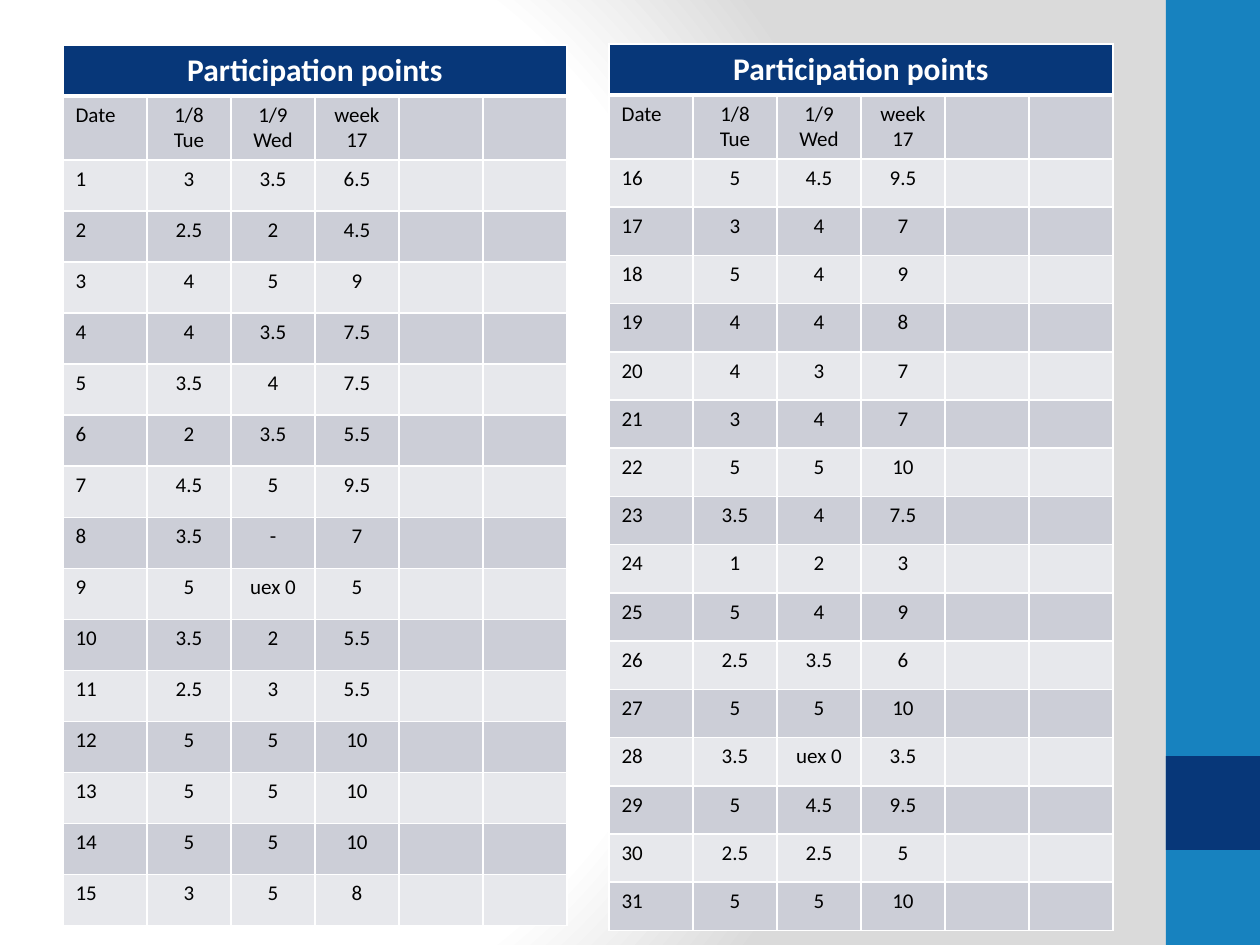
from lxml import etree
from pptx import Presentation
from pptx import util as u
from pptx.dml.color import RGBColor
from pptx.enum import shapes, text
from pptx.oxml import parse_xml
from pptx.oxml.ns import nsdecls, qn

EMU_PER_PX = 914400 / 126
COLORS = {
    "white": "FFFFFF", "black": "000000", "grey": "DADADA",
    "blue": "1782BF", "navy": "073779", "dark_band": "CCCED7", "light_band": "E7E8EC",
}
FONT = "Calibri"
COLUMNS = 6

FIRST_HALF = [
    ("Date", "1/8 Tue", "1/9\nWed", "week 17"),
    ("1", "3", "3.5", "6.5"),
    ("2", "2.5", "2", "4.5"),
    ("3", "4", "5", "9"),
    ("4", "4", "3.5", "7.5"),
    ("5", "3.5", "4", "7.5"),
    ("6", "2", "3.5", "5.5"),
    ("7", "4.5", "5", "9.5"),
    ("8", "3.5", "-", "7"),
    ("9", "5", "uex 0", "5"),
    ("10", "3.5", "2", "5.5"),
    ("11", "2.5", "3", "5.5"),
    ("12", "5", "5", "10"),
    ("13", "5", "5", "10"),
    ("14", "5", "5", "10"),
    ("15", "3", "5", "8"),
]
SECOND_HALF = [
    ("Date", "1/8 Tue", "1/9 Wed", "week 17"),
    ("16", "5", "4.5", "9.5"),
    ("17", "3", "4", "7"),
    ("18", "5", "4", "9"),
    ("19", "4", "4", "8"),
    ("20", "4", "3", "7"),
    ("21", "3", "4", "7"),
    ("22", "5", "5", "10"),
    ("23", "3.5", "4", "7.5"),
    ("24", "1", "2", "3"),
    ("25", "5", "4", "9"),
    ("26", "2.5", "3.5", "6"),
    ("27", "5", "5", "10"),
    ("28", "3.5", "uex 0", "3.5"),
    ("29", "5", "4.5", "9.5"),
    ("30", "2.5", "2.5", "5"),
    ("31", "5", "5", "10"),
]


def px(length):
    return u.Emu(round(length * EMU_PER_PX))


def rgb(name):
    return RGBColor.from_string(COLORS[name])


def paint_background(slide):
    """Radial gradient, white on the left and grey towards the right."""
    stops = "".join(
        f'<a:gs pos="{pos}"><a:srgbClr val="{COLORS[name]}"/></a:gs>'
        for pos, name in ((0, "white"), (75000, "white"), (100000, "grey"))
    )
    background = parse_xml(
        f'<p:bg {nsdecls("p", "a")}><p:bgPr><a:gradFill rotWithShape="1">'
        f'<a:gsLst>{stops}</a:gsLst><a:path path="circle">'
        '<a:fillToRect l="20000" t="50000" r="100000" b="50000"/></a:path>'
        '</a:gradFill><a:effectLst/></p:bgPr></p:bg>'
    )
    slide.element.cSld.insert(0, background)


def add_block(slide, left, top, width, height, color):
    block = slide.shapes.add_shape(
        shapes.MSO_SHAPE.RECTANGLE, px(left), px(top), px(width), px(height))
    block.shadow.inherit = False
    block.fill.solid()
    block.fill.fore_color.rgb = rgb(color)
    block.line.fill.background()


def add_side_band(slide, left, top, width, height):
    add_block(slide, left, top, width, height, "blue")
    add_block(slide, left, top + height * 4 / 5, width, width, "navy")


def set_borders(cell, bottom):
    properties = cell._tc.get_or_add_tcPr()
    for index, (side, points) in enumerate(
            (("lnL", 1), ("lnR", 1), ("lnT", 1), ("lnB", bottom))):
        border = etree.Element(qn(f"a:{side}"), w=str(u.Pt(points)))
        fill = etree.SubElement(border, qn("a:solidFill"))
        etree.SubElement(fill, qn("a:srgbClr"), val=COLORS["white"])
        properties.insert(index, border)


def fill_cell(cell, words, size, color, band, centred, bold=False, bottom=1):
    cell.text_frame.text = words
    cell.fill.solid()
    cell.fill.fore_color.rgb = rgb(band)
    set_borders(cell, bottom)
    for paragraph in cell.text_frame.paragraphs:
        if centred:
            paragraph.alignment = text.PP_ALIGN.CENTER
        for run in paragraph.runs:
            run.font.name = FONT
            run.font.size = u.Pt(size)
            run.font.bold = bold
            run.font.color.rgb = rgb(color)
        # Keeps empty cells from stretching their row
        paragraph._p.get_or_add_endParaRPr().set("sz", str(size * 100))


def add_points_table(slide, left, top, width, height, title_height, points):
    table = slide.shapes.add_table(
        len(points) + 1, COLUMNS, px(left), px(top), px(width), px(height)).table
    table.first_row = table.horz_banding = False
    for column in table.columns:
        column.width = px(width / COLUMNS)
    for row in table.rows:
        row.height = px((height - title_height) / len(points))
    table.rows[0].height = px(title_height)

    for column in range(COLUMNS):
        words = "Participation points" if column == 0 else ""
        fill_cell(table.cell(0, column), words, 18, "white", "navy",
                  centred=True, bold=True, bottom=3)
    table.cell(0, 0).merge(table.cell(0, COLUMNS - 1))

    for row, values in enumerate(points, start=1):
        band = "dark_band" if row % 2 else "light_band"
        for column in range(COLUMNS):
            words = values[column] if column < len(values) else ""
            fill_cell(table.cell(row, column), words, 12, "black", band,
                      centred=column > 0)


def main():
    deck = Presentation()
    deck.slide_width, deck.slide_height = px(1260), px(945)
    slide = deck.slides.add_slide(deck.slide_layouts[6])
    paint_background(slide)
    add_side_band(slide, 1166, 0, 94, 945)
    add_points_table(slide, 63, 45, 504, 868, 51, FIRST_HALF)
    add_points_table(slide, 609, 44, 504, 870, 50, SECOND_HALF)
    deck.save("out.pptx")


if __name__ == "__main__":
    main()
